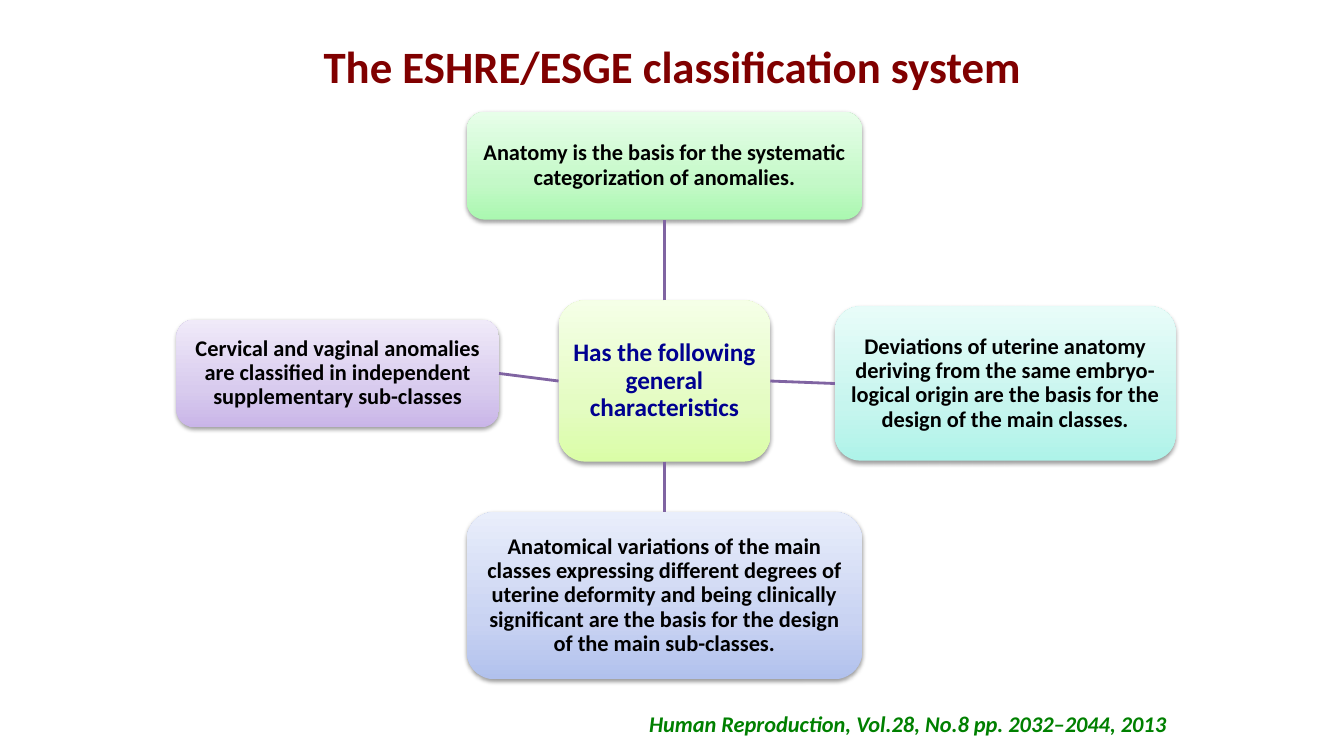
from copy import deepcopy

from lxml.etree import SubElement
from pptx import Presentation
from pptx.dml.color import RGBColor
from pptx.enum.shapes import MSO_CONNECTOR, MSO_SHAPE
from pptx.enum.text import MSO_ANCHOR, PP_ALIGN
from pptx.oxml.ns import qn
from pptx.util import Inches, Pt

COLORS = {
    "title": "800000",
    "core": "000090",
    "body": "000000",
    "citation": "008000",
    "line": "8064A2",
    "shadow": "000000",
}
GRADIENTS = {
    "lime": ("DAFDA7", "E4FCC2", "F5FFE7"),
    "green": ("AAF8B0", "C4F9C8", "E7FEE9"),
    "teal": ("AEF3E9", "C6F5EE", "E8FCF9"),
    "blue": ("B1C1ED", "C9D3F2", "E9EEFB"),
    "purple": ("C9B5E8", "D8CBEE", "F0EAF9"),
}
TOP, LEFT, BOTTOM, RIGHT = range(4)
CORE = ("Has the following general characteristics", (3.79, 1.87, 2.1, 1.6), "lime")
BRANCHES = [
    ("Anatomy is the basis for the systematic categorization of anomalies.",
     (2.88, 0, 3.92, 1.07), "green", TOP, BOTTOM),
    ("Deviations of uterine anatomy deriving from the same embryo- logical origin "
     "are the basis for the design of the main classes.",
     (6.53, 1.93, 3.38, 1.53), "teal", RIGHT, LEFT),
    ("Anatomical variations of the main classes expressing different degrees of "
     "uterine deformity and being clinically significant are the basis for the "
     "design of the main sub-classes.",
     (2.88, 3.97, 3.92, 1.66), "blue", BOTTOM, TOP),
    ("Cervical and vaginal anomalies are classified in independent supplementary "
     "sub-classes",
     (0, 2.06, 3.2, 1.07), "purple", LEFT, RIGHT),
]


def write_text(s, text, size, color, align=PP_ALIGN.CENTER, anchor=MSO_ANCHOR.MIDDLE,
               italic=False, spacing=1.0, margins=(0.1, 0.05)):
    tf = s.text_frame
    tf.word_wrap = True
    tf.vertical_anchor = anchor
    tf.margin_left = tf.margin_right = Inches(margins[0])
    tf.margin_top = tf.margin_bottom = Inches(margins[1])
    p = tf.paragraphs[0]
    p.alignment = align
    p.line_spacing = spacing
    r = p.add_run()
    r.text = text
    r.font.name = "Calibri"
    r.font.size = Pt(size)
    r.font.bold = True
    r.font.italic = italic
    r.font.color.rgb = RGBColor.from_string(COLORS[color])


def add_label(slide, box, text, size, color, **style):
    s = slide.shapes.add_textbox(*map(Inches, box))
    write_text(s, text, size, color, **style)


def fill_gradient(s, stops):
    s.fill.gradient()
    s.fill.gradient_angle = 90
    first = s._element.spPr.find(".//" + qn("a:gs"))
    first.addnext(deepcopy(first))
    for stop, color, position in zip(s.fill.gradient_stops, stops, (0, 0.35, 1)):
        stop.color.rgb = RGBColor.from_string(color)
        stop.position = position


def add_shadow(s):
    s.shadow.inherit = False
    effects = s._element.spPr.find(qn("a:effectLst"))
    shadow = SubElement(effects, qn("a:outerShdw"), blurRad=str(Pt(3.1)),
                        dist=str(Pt(1.6)), dir="5400000", rotWithShape="0")
    color = SubElement(shadow, qn("a:srgbClr"), val=COLORS["shadow"])
    SubElement(color, qn("a:alpha"), val="38000")


def add_node(slide, box, text, gradient, size=16, color="body", margin=0.04):
    s = slide.shapes.add_shape(MSO_SHAPE.ROUNDED_RECTANGLE, *map(Inches, box))
    fill_gradient(s, GRADIENTS[gradient])
    s.line.fill.background()
    add_shadow(s)
    write_text(s, text, size, color, spacing=0.9, margins=(margin, margin))
    return s


def add_link(slide, start, start_side, end, end_side):
    c = slide.shapes.add_connector(MSO_CONNECTOR.STRAIGHT, 0, 0, 0, 0)
    c.begin_connect(start, start_side)
    c.end_connect(end, end_side)
    c.line.color.rgb = RGBColor.from_string(COLORS["line"])
    c.line.width = Pt(2)
    SubElement(c._element.spPr, qn("a:effectLst"))


def add_diagram(slide, left, top):
    def place(box):
        x, y, width, height = box
        return left + x, top + y, width, height

    text, box, gradient = CORE
    core = add_node(slide, place(box), text, gradient, size=18, color="core", margin=0.05)
    for text, box, gradient, core_side, side in BRANCHES:
        branch = add_node(slide, place(box), text, gradient)
        add_link(slide, core, core_side, branch, side)


def main():
    prs = Presentation()
    prs.slide_width, prs.slide_height = Inches(13.33), Inches(7.5)
    slide = prs.slides.add_slide(prs.slide_layouts[6])
    add_label(slide, (0.67, 0.3, 12, 1.25), "The ESHRE/ESGE classification system",
              32, "title", anchor=MSO_ANCHOR.TOP, margins=(0.1, 0.08))
    add_diagram(slide, 1.75, 1.11)
    add_label(slide, (3.77, 7, 7.9, 0.37),
              "Human Reproduction, Vol.28, No.8 pp. 2032–2044, 2013",
              16, "citation", align=PP_ALIGN.RIGHT, anchor=MSO_ANCHOR.TOP, italic=True)
    prs.save("out.pptx")


if __name__ == "__main__":
    main()
